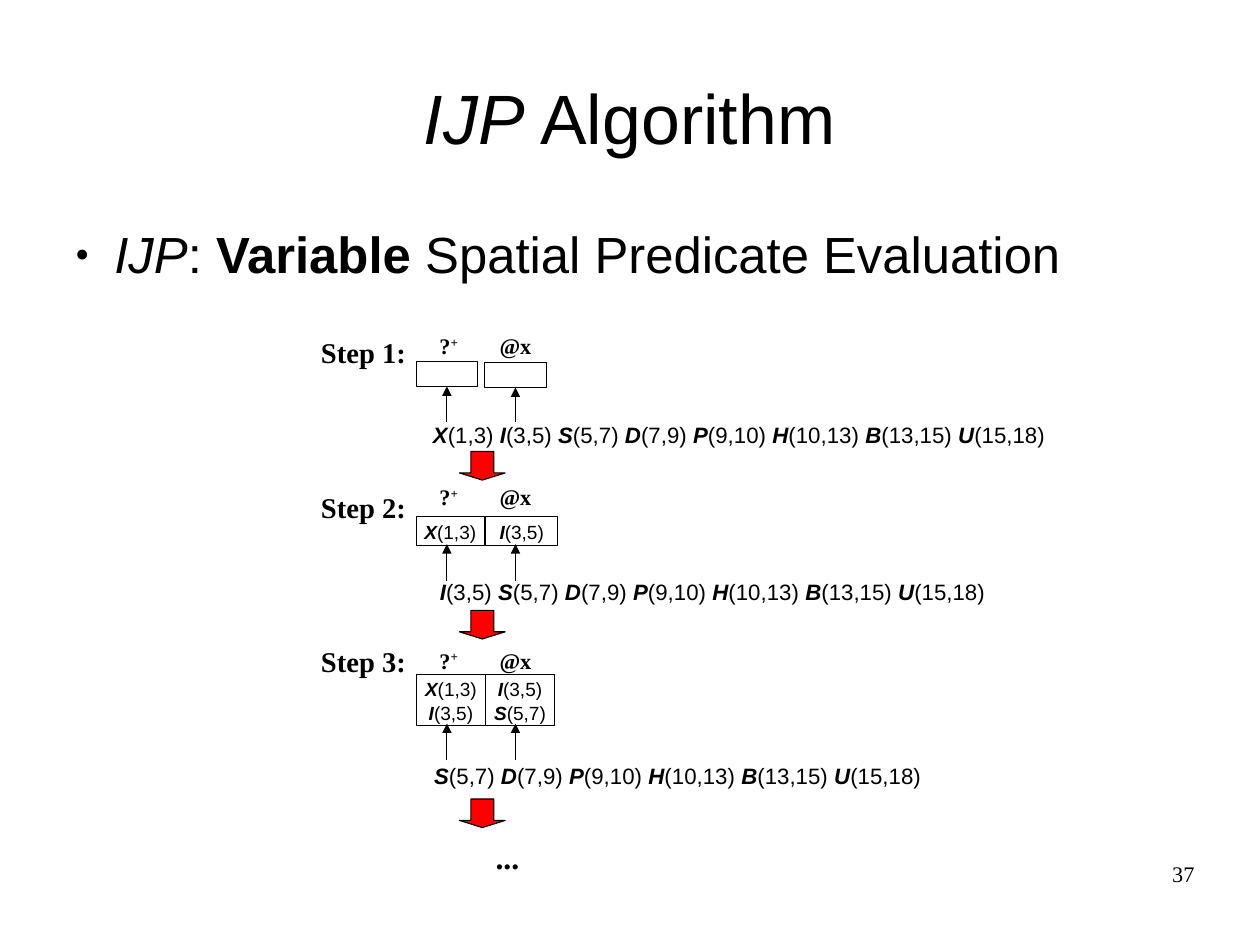
from dataclasses import dataclass

from lxml.etree import SubElement
from pptx import Presentation
from pptx.dml.color import RGBColor
from pptx.enum.shapes import MSO_CONNECTOR as Connector, MSO_SHAPE as Preset
from pptx.enum.text import MSO_ANCHOR as Anchor, MSO_AUTO_SIZE as AutoSize, PP_ALIGN as Align
from pptx.oxml.ns import qn
from pptx.util import Inches, Pt


@dataclass(frozen=True)
class Theme:
    ink: RGBColor = RGBColor(0, 0, 0)
    paper: RGBColor = RGBColor(255, 255, 255)
    accent: RGBColor = RGBColor(255, 0, 0)
    sans: str = "Arial"
    serif: str = "Times New Roman"
    title: int = 44
    body: int = 32
    dots: int = 20
    step: int = 18
    label: int = 14
    cell: int = 12
    thin: float = 0.5
    line: float = 0.75


THEME = Theme()
CM_PER_INCH = 2.54
LABEL_INSETS = (0.1, 0.06, 0.1, 0.05)
STREAM_INSETS = (0.1, 0.05, 0.1, 0.05)

NODES = ["X(1,3)", "I(3,5)", "S(5,7)", "D(7,9)",
         "P(9,10)", "H(10,13)", "B(13,15)", "U(15,18)"]

# Each step: name and label tops, arrow tip, stream area,
# boxes as (left, top, width, height), top of the red arrow
STEPS = [
    dict(name_top=2.9, label_top=2.87, tip=3.37, stream=(3.69, 3.63, 5.76, 0.33),
         boxes=[(3.64, 3.16, 0.54, 0.22), (4.24, 3.17, 0.54, 0.22)], next_top=3.95),
    dict(name_top=4.25, label_top=4.19, tip=4.76, stream=(3.75, 5.0, 5.08, 0.31),
         boxes=[(3.64, 4.52, 0.6, 0.25), (4.25, 4.52, 0.63, 0.25)], next_top=5.34),
    dict(name_top=5.6, label_top=5.62, tip=6.33, stream=(3.7, 6.61, 4.63, 0.34),
         boxes=[(3.64, 5.9, 0.61, 0.45), (4.25, 5.9, 0.6, 0.45)], next_top=6.99),
]
ARROW_X = (3.91, 4.51)
ARROW_LENGTH = 0.32


def write(shape, paragraphs, size, font=THEME.sans, align=Align.LEFT, spacing=None,
          insets=(0, 0, 0, 0), anchor=Anchor.TOP):
    """Fill a shape; a paragraph is a list of (text, style), style letters: b, i, ^."""
    frame = shape.text_frame
    frame.word_wrap = True
    frame.auto_size = AutoSize.NONE
    frame.vertical_anchor = anchor
    (frame.margin_left, frame.margin_top,
     frame.margin_right, frame.margin_bottom) = map(Inches, insets)
    for index, runs in enumerate(paragraphs):
        para = frame.add_paragraph() if index else frame.paragraphs[0]
        para.alignment = align
        para.space_before = Pt(0)
        if spacing:
            para.line_spacing = spacing
        for text, style in runs:
            run = para.add_run()
            run.text = text
            run.font.name = font
            run.font.size = Pt(size)
            run.font.color.rgb = THEME.ink
            run.font.bold = "b" in style
            run.font.italic = "i" in style
            if "^" in style:
                run._r.get_or_add_rPr().set("baseline", "33000")


def place(shape, left, top, width, height):
    shape.left, shape.top = Inches(left), Inches(top)
    shape.width, shape.height = Inches(width), Inches(height)


def add_text(page, area, paragraphs, size, **form):
    write(page.shapes.add_textbox(*map(Inches, area)), paragraphs, size, **form)


def add_label(page, area, runs, size=THEME.label, align=Align.CENTER):
    add_text(page, area, [runs], size, font=THEME.serif, align=align,
             spacing=0.93, insets=LABEL_INSETS)


def add_box(page, preset, area, fill, width):
    box = page.shapes.add_shape(preset, *map(Inches, area))
    box.shadow.inherit = False
    box.fill.solid()
    box.fill.fore_color.rgb = fill
    box.line.color.rgb = THEME.ink
    box.line.width = Pt(width)
    return box


def add_pointer(page, x, tip, box):
    arrow = page.shapes.add_connector(Connector.STRAIGHT, Inches(x), Inches(tip + ARROW_LENGTH),
                                      Inches(x), Inches(tip))
    # Join only where the tip meets the middle of the box's lower side
    if abs(box.left + box.width // 2 - Inches(x)) < Inches(0.01):
        arrow.end_connect(box, 2)
    arrow.line.color.rgb = THEME.ink
    arrow.line.width = Pt(THEME.line)
    SubElement(arrow.line._get_or_add_ln(), qn("a:tailEnd"), type="triangle")
    SubElement(arrow._element.spPr, qn("a:effectLst"))


def node_runs(node, gap=""):
    return [(node[0], "bi"), (node[1:] + gap, "")]


def stream_runs(nodes):
    runs = [run for node in nodes[:-1] for run in node_runs(node, " ")]
    return runs + node_runs(nodes[-1])


def add_step(page, index, step):
    # Headings
    add_label(page, (2.71, step["name_top"], 1.02, 0.32), [(f"Step {index + 1}:", "b")],
              size=THEME.step, align=Align.LEFT)
    add_label(page, (3.72, step["label_top"], 0.41, 0.3), [("?", "b"), ("+", "b^")])
    add_label(page, (4.19, step["label_top"], 0.64, 0.3), [("@x", "b")])
    # Buffers: each holds as many nodes as steps already taken
    for column, (area, x) in enumerate(zip(step["boxes"], ARROW_X)):
        box = add_box(page, Preset.RECTANGLE, area, THEME.paper, THEME.thin)
        held = NODES[column:column + index]
        if held:
            write(box, [node_runs(node) for node in held], THEME.cell, align=Align.CENTER,
                  spacing=1.04, insets=(0.01,) * 4, anchor=Anchor.MIDDLE)
        add_pointer(page, x, step["tip"], box)
    # Remaining stream and the way on
    add_text(page, step["stream"], [stream_runs(NODES[index:])], THEME.label,
             spacing=1.04, insets=STREAM_INSETS)
    down = add_box(page, Preset.DOWN_ARROW, (4.02, step["next_top"], 0.4, 0.25),
                   THEME.accent, THEME.line)
    down.adjustments[0], down.adjustments[1] = 0.5, 0.25


def add_heading(page):
    title, body = page.shapes.title, page.placeholders[1]
    place(title, 0.55, 0.38, 9.92, 1.28)
    write(title, [[("IJP", "i"), (" Algorithm", "")]], THEME.title,
          align=Align.CENTER, anchor=Anchor.MIDDLE)

    place(body, 0.55, 1.93, 9.92, 0.72)
    write(body, [[("IJP", "i"), (": ", ""), ("Variable", "b"),
                  (" Spatial Predicate Evaluation", "")]], THEME.body, spacing=1.04)
    para = body.text_frame.paragraphs[0]
    para.space_after = Pt(14.2)
    props = para._p.get_or_add_pPr()
    props.set("marL", str(Inches(0.45)))
    props.set("indent", str(Inches(-0.34)))
    color = SubElement(props, qn("a:buClr"))
    SubElement(color, qn("a:srgbClr"), val=str(THEME.ink))
    SubElement(props, qn("a:buSzPct"), val="45000")
    SubElement(props, qn("a:buFont"), typeface=THEME.sans)
    SubElement(props, qn("a:buChar"), char="●")


def main():
    deck = Presentation()
    # The page measures 28 by 21 cm
    deck.slide_width, deck.slide_height = Inches(28 / CM_PER_INCH), Inches(21 / CM_PER_INCH)
    page = deck.slides.add_slide(deck.slide_layouts[1])
    add_heading(page)
    for index, step in enumerate(STEPS):
        add_step(page, index, step)
    add_label(page, (4.02, 7.3, 0.84, 0.31), [("...", "b")], size=THEME.dots)
    # Page number
    add_text(page, (7.9, 7.55, 2.55, 0.53), [[("37", "")]], THEME.label,
             font=THEME.serif, align=Align.RIGHT, spacing=0.93)
    deck.save("out.pptx")


if __name__ == "__main__":
    main()
